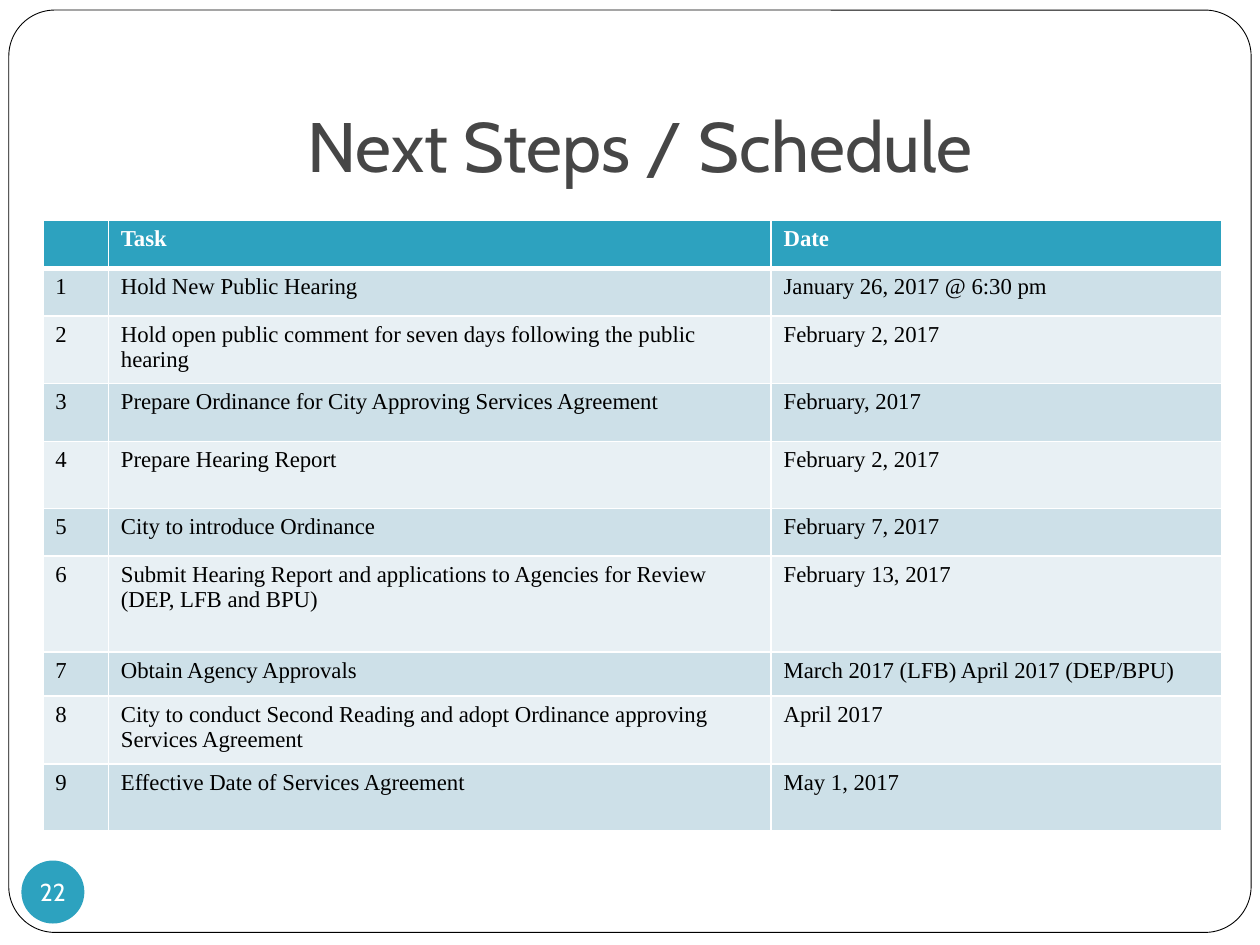
from dataclasses import dataclass

from lxml.etree import SubElement
from pptx import Presentation
from pptx.dml.color import RGBColor
from pptx.enum.shapes import MSO_SHAPE as Shape
from pptx.enum.text import MSO_ANCHOR as Anchor, PP_ALIGN as Align
from pptx.oxml.ns import qn
from pptx.util import Inches, Pt


@dataclass(frozen=True)
class Theme:
    heading_font: str = "Cabin"
    table_font: str = "Times New Roman"
    title_size: float = 40
    number_size: float = 14
    table_size: float = 13
    accent: str = "2DA2BF"
    title: str = "464646"
    dark: str = "000000"
    light: str = "FFFFFF"
    bands: tuple = ("CDE0E8", "E8F0F4")
    thin_border: float = 1
    thick_border: float = 3


COLUMN_WIDTHS = (0.52, 5.26, 3.58)
ROW_HEIGHTS = (0.38, 0.38, 0.49, 0.46, 0.53, 0.38, 0.76, 0.35, 0.54, 0.53)
HEADER = ("", "Task", "Date")
SCHEDULE = (
    ("Hold New Public Hearing", "January 26, 2017 @ 6:30 pm"),
    ("Hold open public comment for seven days following the public hearing",
     "February 2, 2017"),
    ("Prepare Ordinance for City Approving Services Agreement", "February, 2017"),
    ("Prepare Hearing Report", "February 2, 2017"),
    ("City to introduce Ordinance", "February 7, 2017"),
    ("Submit Hearing Report and applications to Agencies for Review (DEP, LFB and BPU)",
     "February 13, 2017"),
    ("Obtain Agency Approvals", "March 2017 (LFB) April 2017 (DEP/BPU)"),
    ("City to conduct Second Reading and adopt Ordinance approving Services Agreement",
     "April 2017"),
    ("Effective Date of Services Agreement", "May 1, 2017"),
)


class SlideBuilder:
    def __init__(self, slide, theme):
        self.slide = slide
        self.theme = theme

    def format_text(self, text_frame, font, size, color, align=None, bold=False):
        for paragraph in text_frame.paragraphs:
            paragraph.alignment = align
            for run in paragraph.runs:
                run.font.name = font
                run.font.size = Pt(size)
                run.font.bold = bold
                run.font.color.rgb = RGBColor.from_string(color)
            if not paragraph.runs:
                # An empty cell would otherwise take the default size
                SubElement(paragraph._p, qn("a:endParaRPr"), sz=str(int(size * 100)))

    def add_shape(self, kind, left, top, width, height, fill):
        shape = self.slide.shapes.add_shape(
            kind, Inches(left), Inches(top), Inches(width), Inches(height))
        shape.shadow.inherit = False
        shape.fill.solid()
        shape.fill.fore_color.rgb = RGBColor.from_string(fill)
        shape.line.fill.background()
        return shape

    def add_frame(self, left, top, width, height):
        frame = self.add_shape(
            Shape.ROUNDED_RECTANGLE, left, top, width, height, self.theme.light)
        frame.adjustments[0] = 0.05
        frame.line.color.rgb = RGBColor.from_string(self.theme.dark)
        frame.line.width = Pt(0.5)

    def add_title(self, text, left, top, width, height):
        title = self.slide.shapes.add_textbox(
            Inches(left), Inches(top), Inches(width), Inches(height))
        text_frame = title.text_frame
        text_frame.word_wrap = True
        text_frame.vertical_anchor = Anchor.BOTTOM
        text_frame.margin_bottom = Inches(0.1)
        text_frame.text = text
        self.format_text(text_frame, self.theme.heading_font, self.theme.title_size,
                         self.theme.title, Align.CENTER)

    def add_page_number(self, text, left, top, diameter):
        badge = self.add_shape(
            Shape.OVAL, left, top, diameter, diameter, self.theme.accent)
        text_frame = badge.text_frame
        text_frame.word_wrap = False
        text_frame.vertical_anchor = Anchor.MIDDLE
        text_frame.margin_left = text_frame.margin_right = 0
        text_frame.margin_top = text_frame.margin_bottom = 0
        text_frame.text = text
        self.format_text(text_frame, self.theme.heading_font, self.theme.number_size,
                         self.theme.light, Align.CENTER)

    def add_borders(self, cell, top, bottom):
        thin = self.theme.thin_border
        properties = cell._tc.get_or_add_tcPr()
        for side, width in (("L", thin), ("R", thin), ("T", top), ("B", bottom)):
            line = SubElement(properties, qn(f"a:ln{side}"), w=str(Pt(width)))
            fill = SubElement(line, qn("a:solidFill"))
            SubElement(fill, qn("a:srgbClr"), val=self.theme.light)

    def add_table(self, rows, left, top, column_widths, row_heights):
        theme = self.theme
        table = self.slide.shapes.add_table(
            len(rows), len(column_widths), Inches(left), Inches(top),
            Inches(sum(column_widths)), Inches(sum(row_heights))).table
        for column, width in zip(table.columns, column_widths):
            column.width = Inches(width)
        for index, (row, height, values) in enumerate(
                zip(table.rows, row_heights, rows)):
            row.height = Inches(height)
            is_header = index == 0
            fill = theme.accent if is_header else theme.bands[(index - 1) % 2]
            color = theme.light if is_header else theme.dark
            top_border = theme.thick_border if index == 1 else theme.thin_border
            bottom_border = theme.thick_border if is_header else theme.thin_border
            for cell, value in zip(row.cells, values):
                cell.text_frame.text = value
                self.format_text(cell.text_frame, theme.table_font, theme.table_size,
                                 color, bold=is_header)
                self.add_borders(cell, top_border, bottom_border)
                cell.fill.solid()
                cell.fill.fore_color.rgb = RGBColor.from_string(fill)


def main():
    presentation = Presentation()
    presentation.slide_width = Inches(10)
    presentation.slide_height = Inches(7.5)
    slide = presentation.slides.add_slide(presentation.slide_layouts[6])
    builder = SlideBuilder(slide, Theme())

    # Page frame and title
    builder.add_frame(0.07, 0.08, 9.86, 7.32)
    builder.add_title("Next Steps / Schedule", 0.83, 0.33, 8.5, 1.25)

    # Page number
    builder.add_page_number("22", 0.17, 6.83, 0.5)

    # Schedule table with numbered tasks
    rows = [HEADER]
    rows += [(str(number), *step) for number, step in enumerate(SCHEDULE, start=1)]
    builder.add_table(rows, 0.34, 1.75, COLUMN_WIDTHS, ROW_HEIGHTS)

    presentation.save("out.pptx")


if __name__ == "__main__":
    main()
